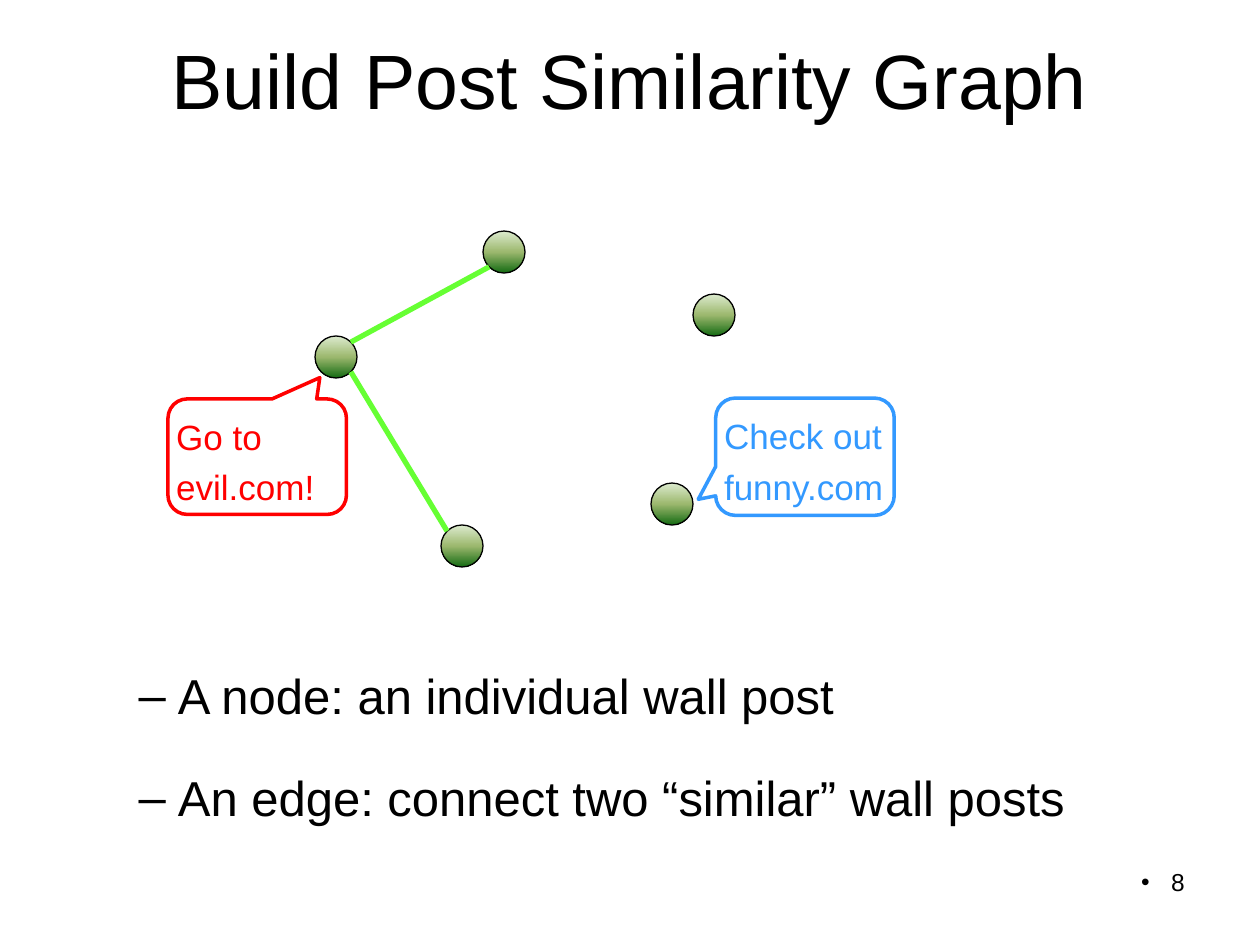
"""Build the slide that explains the post similarity graph."""
import copy
import math

import pptx
import pptx.dml.color
import pptx.enum.dml
import pptx.enum.shapes
import pptx.enum.text
import pptx.oxml.ns
import pptx.util
from lxml import etree

Pt = pptx.util.Pt
RGBColor = pptx.dml.color.RGBColor
SHAPES = pptx.enum.shapes.MSO_SHAPE
ALIGN = pptx.enum.text.PP_ALIGN
ANCHOR = pptx.enum.text.MSO_ANCHOR
qn = pptx.oxml.ns.qn

BLACK = RGBColor(0, 0, 0)
EDGE_GREEN = RGBColor(0x66, 0xFF, 0x33)
RED = RGBColor(0xFF, 0, 0)
BLUE = RGBColor(0x33, 0x99, 0xFF)
NODE_STOPS = [
    (0, RGBColor(0xDD, 0xEB, 0xCF)),
    (0.5, RGBColor(0x9C, 0xB8, 0x6E)),
    (1, RGBColor(0x15, 0x6B, 0x13)),
]

TITLE = "Build Post Similarity Graph"
POINTS = [
    "A node: an individual wall post",
    "An edge: connect two “similar” wall posts",
]
PAGE_NUMBER = "8"
NODE_SIZE = 24
NODES = {
    "top": (276, 132),
    "left": (180, 192),
    "right": (396, 168),
    "middle": (372, 276),
    "bottom": (252, 300),
}
EDGES = [("top", "left"), ("left", "bottom")]
CALLOUTS = [
    ("Check out funny.com", (409, 227.5, 102, 67), (-0.598, 0.363, 0.167), BLUE),
    ("Go to evil.com!", (96, 228, 102, 66), (0.351, -0.685, 0.167), RED),
]


def apply(target, values):
    for name, value in values.items():
        setattr(target, name, value)


def points(lengths):
    return [Pt(length) for length in lengths]


def place(shape, frame):
    apply(shape, dict(zip(("left", "top", "width", "height"), points(frame))))


def write(para, text, size, color=BLACK, **layout):
    para.text = text
    apply(para, layout)
    apply(para.font, {"size": Pt(size), "name": "Arial"})
    para.font.color.rgb = color


def add_bullet(para, mark, margin, indent):
    properties = para._p.get_or_add_pPr()
    properties.set("marL", str(Pt(margin)))
    properties.set("indent", str(Pt(indent)))
    etree.SubElement(properties, qn("a:buFont")).set("typeface", "Arial")
    etree.SubElement(properties, qn("a:buChar")).set("char", mark)


def set_line(line, color, width):
    line.color.rgb = color
    line.width = Pt(width)


def add_node(page, corner):
    node = page.shapes.add_shape(
        SHAPES.OVAL, *points((*corner, NODE_SIZE, NODE_SIZE)))
    node.shadow.inherit = False
    node.fill.gradient()
    node.fill.gradient_angle = 270
    stop_list = node._element.spPr.find(qn("a:gradFill")).find(qn("a:gsLst"))
    stop_list.insert(1, copy.deepcopy(stop_list[0]))
    for stop, (position, color) in zip(node.fill.gradient_stops, NODE_STOPS):
        stop.position = position
        stop.color.rgb = color
    set_line(node.line, BLACK, 0.75)


def add_edge(page, start, end):
    offset = NODE_SIZE / 2 * math.sqrt(0.5)
    centers = [[side + NODE_SIZE / 2 for side in NODES[name]] for name in (start, end)]
    steps = [math.copysign(offset, b - a) for a, b in zip(*centers)]
    begin = [center + step for center, step in zip(centers[0], steps)]
    finish = [center - step for center, step in zip(centers[1], steps)]
    edge = page.shapes.add_connector(
        pptx.enum.shapes.MSO_CONNECTOR.STRAIGHT, *points(begin + finish))
    set_line(edge.line, EDGE_GREEN, 3)
    etree.SubElement(edge._element.spPr, qn("a:effectLst"))


def add_callout(page, text, frame, adjustments, color):
    callout = page.shapes.add_shape(SHAPES.ROUNDED_RECTANGULAR_CALLOUT, *points(frame))
    callout.shadow.inherit = False
    callout.fill.background()
    set_line(callout.line, color, 2)
    for index, value in enumerate(adjustments):
        callout.adjustments[index] = value
    box = callout.text_frame
    sides = ("margin_left", "margin_top", "margin_right", "margin_bottom")
    apply(box, dict.fromkeys(sides, Pt(1.5)))
    apply(box, {"word_wrap": True, "vertical_anchor": ANCHOR.TOP})
    write(box.paragraphs[0], text, 20, color, alignment=ALIGN.LEFT, line_spacing=1.2)


def main():
    deck = pptx.Presentation()
    apply(deck, {"slide_width": Pt(720), "slide_height": Pt(540)})
    page = deck.slides.add_slide(deck.slide_layouts[1])

    title = page.shapes.title
    place(title, (36, 0, 648, 90))
    title.text_frame.vertical_anchor = ANCHOR.MIDDLE
    write(title.text_frame.paragraphs[0], TITLE, 44, alignment=ALIGN.CENTER)

    body = page.placeholders[1]
    place(body, (36, 360, 648, 122.4))
    for index, text in enumerate(POINTS):
        box = body.text_frame
        para = box.add_paragraph() if index else box.paragraphs[0]
        layout = {"level": 1, "line_spacing": 1.5, "space_before": Pt(8 if index else 0)}
        apply(para, layout)
        add_bullet(para, "–", 58.5, -22.5)
        write(para, text, 28)

    number = page.shapes.add_textbox(*points((516, 492, 168, 37.5))).text_frame
    number.word_wrap = True
    add_bullet(number.paragraphs[0], "•", 17, -17)
    write(number.paragraphs[0], PAGE_NUMBER, 14, alignment=ALIGN.RIGHT)

    for corner in NODES.values():
        add_node(page, corner)
    for start, end in EDGES:
        add_edge(page, start, end)
    for callout in CALLOUTS:
        add_callout(page, *callout)

    deck.save("out.pptx")


if __name__ == "__main__":
    main()
